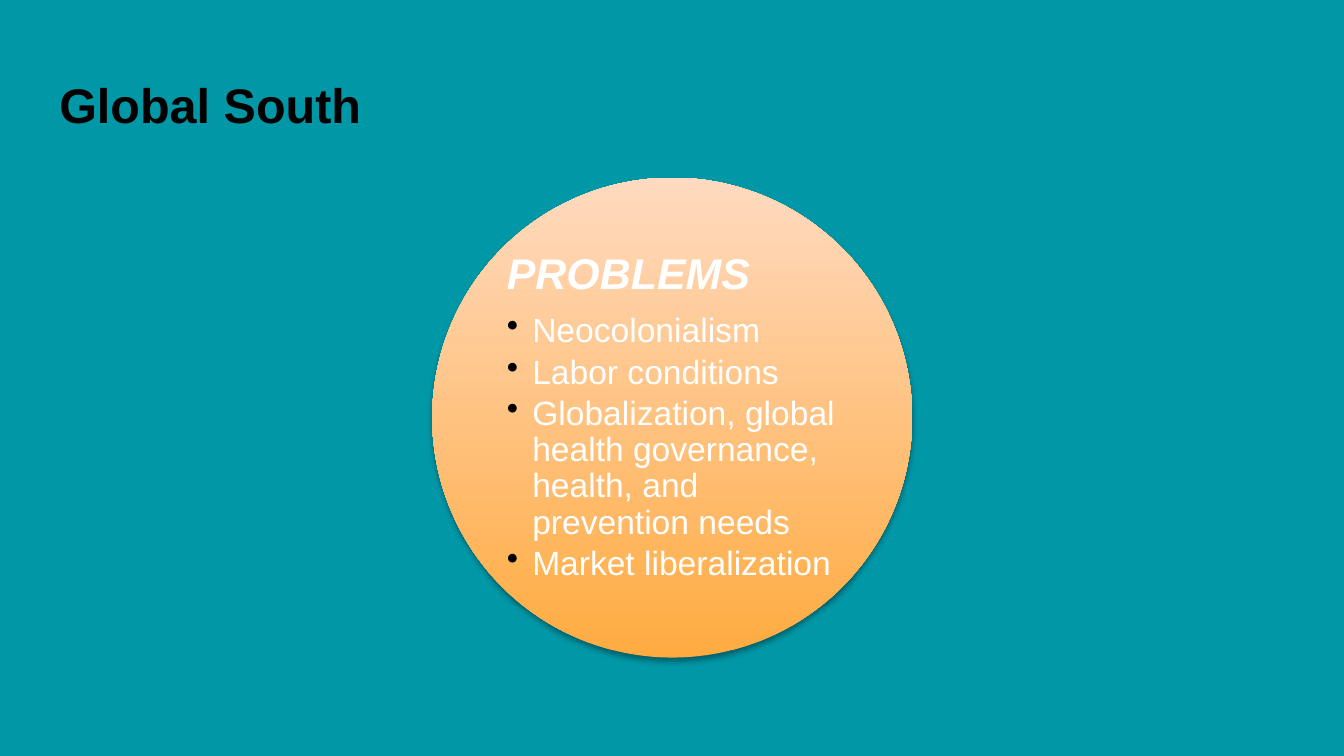
"""Build the Global South slide: a title above a circle listing its problems."""
from lxml import etree
from pptx import Presentation
from pptx.dml.color import RGBColor
from pptx.enum.shapes import MSO_SHAPE
from pptx.enum.text import MSO_ANCHOR, MSO_AUTO_SIZE, PP_ALIGN
from pptx.oxml import parse_xml
from pptx.oxml.ns import nsdecls, qn
from pptx.util import Cm, Pt

OVAL = MSO_SHAPE.OVAL
MIDDLE = MSO_ANCHOR.MIDDLE
NO_FIT = MSO_AUTO_SIZE.NONE
LEFT = PP_ALIGN.LEFT
TITLE_ONLY = 5

COLORS = {
    "background": "0097A7",
    "black": "000000",
    "white": "FFFFFF",
    "orange": "FFAB40",
    "peach": "FFDAC0",
}
PROBLEMS = [
    "Neocolonialism",
    "Labor conditions",
    "Globalization, global health governance, health, and prevention needs",
    "Market liberalization",
]


def style_paragraph(para, size, color, bold=False, italic=False):
    para.alignment = LEFT
    para.line_spacing = 0.9
    para.font.name = "Arial"
    para.font.size = Pt(size)
    para.font.bold = bold
    para.font.italic = italic
    para.font.color.rgb = RGBColor.from_string(COLORS[color])


def set_frame(frame, inset):
    frame.word_wrap = True
    frame.auto_size = NO_FIT
    frame.vertical_anchor = MIDDLE
    frame.margin_left = frame.margin_right = inset
    frame.margin_top = frame.margin_bottom = inset


deck = Presentation()
deck.slide_width = Cm(25.4)
deck.slide_height = Cm(14.29)
page = deck.slides.add_slide(deck.slide_layouts[TITLE_ONLY])
page.background.fill.solid()
page.background.fill.fore_color.rgb = RGBColor.from_string(COLORS["background"])

title = page.shapes.title
title.left, title.top = Cm(0.87), Cm(1.24)
title.width, title.height = Cm(23.66), Cm(1.59)
set_frame(title.text_frame, Cm(0.25))
title.text_frame.text = "Global South"
style_paragraph(title.text_frame.paragraphs[0], 26, "black", bold=True)

group = page.shapes.add_group_shape()
circle = group.shapes.add_shape(OVAL, Cm(8.17), Cm(3.36), Cm(9.07), Cm(9.07))
circle.line.fill.background()
circle.fill.gradient()
circle.fill.gradient_angle = 90
for stop, color in zip(circle.fill.gradient_stops, ("orange", "peach")):
    stop.color.rgb = RGBColor.from_string(COLORS[color])
circle.shadow.inherit = False
effects = circle.element.spPr.find(qn("a:effectLst"))
effects.append(parse_xml(
    f'<a:outerShdw {nsdecls("a")} blurRad="{Pt(3.1)}" dist="{Pt(1.8)}" '
    f'dir="5400000" rotWithShape="0"><a:srgbClr val="{COLORS["black"]}">'
    '<a:alpha val="35000"/></a:srgbClr></a:outerShdw>'
))

box = group.shapes.add_textbox(Cm(9.5), Cm(4.69), Cm(6.41), Cm(6.41))
frame = box.text_frame
set_frame(frame, Cm(0.08))
heading = frame.paragraphs[0]
heading.text = "PROBLEMS"
heading.space_after = Pt(8)
style_paragraph(heading, 23, "white", bold=True, italic=True)

for problem in PROBLEMS:
    para = frame.add_paragraph()
    para.text = problem
    para.level = 1
    para.space_after = Pt(2.7)
    style_paragraph(para, 18, "white")
    properties = para._p.get_or_add_pPr()
    properties.set("marL", str(Cm(0.48)))
    properties.set("indent", str(-Cm(0.48)))
    bullet_color = parse_xml(
        f'<a:buClr {nsdecls("a")}><a:srgbClr val="{COLORS["black"]}"/></a:buClr>'
    )
    bullet = etree.Element(qn("a:buChar"), char="•")
    defaults = properties.find(qn("a:defRPr"))
    defaults.addprevious(bullet_color)
    defaults.addprevious(bullet)

deck.save("out.pptx")
